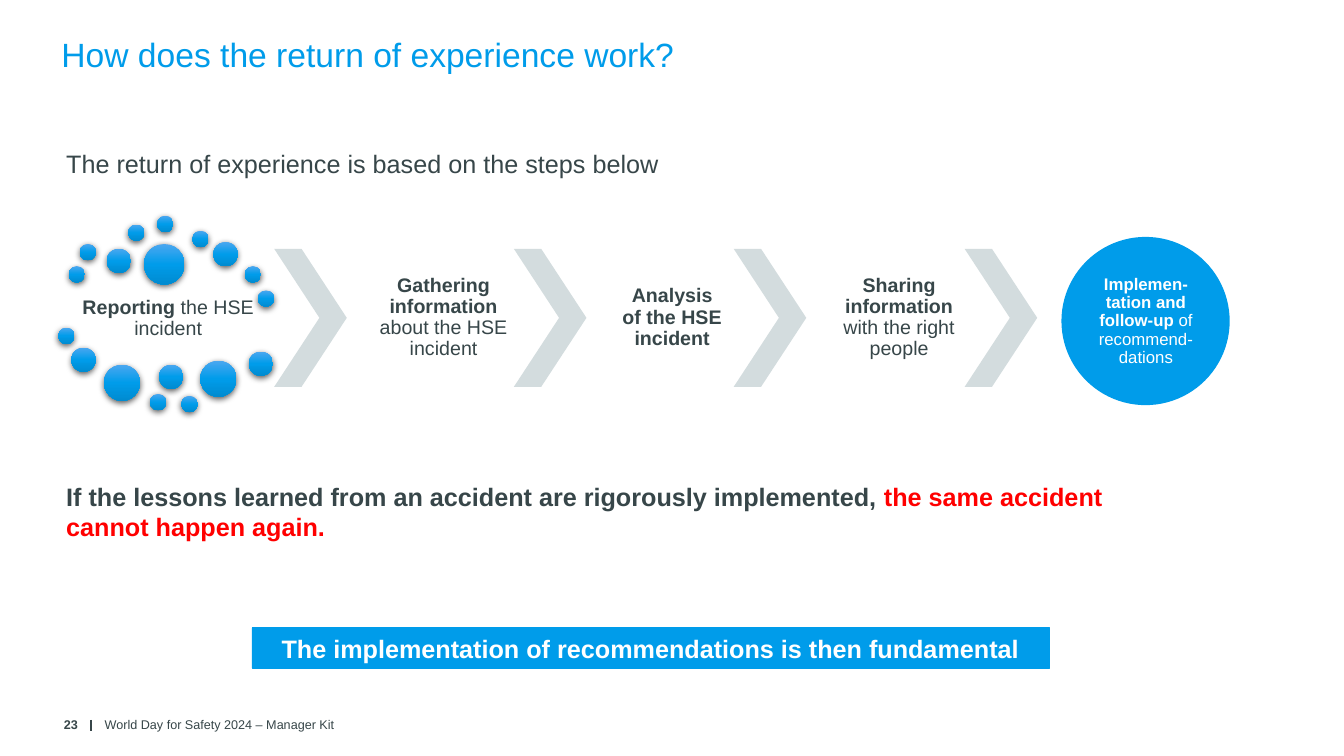
from pptx import Presentation, oxml
from pptx import util as u
from pptx.dml.color import RGBColor
from pptx.enum import shapes, text
from pptx.oxml import ns

COLORS = {
    "blue": "009CEA", "light_blue": "4BA7F0", "dark_blue": "008BD0",
    "slate": "374649", "grey": "D3DCDE", "red": "FF0000",
    "white": "FFFFFF", "black": "000000",
}
DOTS = {
    0.41: [(1.73, 6.71), (2.01, 6.15), (3.23, 5.66), (3.96, 5.44), (4.85, 5.82),
           (6.17, 6.71), (6.5, 7.32), (1.47, 8.26), (3.78, 9.93), (4.57, 9.98)],
    0.61: [(2.69, 6.27), (5.38, 6.1), (1.8, 8.76), (4.01, 9.19), (6.27, 8.86)],
    0.91: [(2.62, 9.19), (5.05, 9.09)],
    1.02: [(3.63, 6.15)],
}
CHEVRON_LEFTS = [6.91, 12.95, 18.49, 24.31]
STEP_TOP, STEP_HEIGHT = 6.27, 3.48
STEPS = [
    (1.75, 7.21, 1.65, [[("Reporting ", True), ("the HSE incident", False)]]),
    (8.69, STEP_TOP, STEP_HEIGHT,
     [[("Gathering information", True)], [("about the HSE incident", False)]]),
    (14.45, STEP_TOP, STEP_HEIGHT,
     [[("Analysis", True)], [("of the HSE", True)], [("incident", True)]]),
    (20.17, STEP_TOP, STEP_HEIGHT,
     [[("Sharing", True)], [("information", True)],
      [("with the right", False)], [("people", False)]]),
]
CENTERED = {"alignment": text.PP_ALIGN.CENTER, "line_spacing": 0.9}
MIDDLE = {"vertical_anchor": text.MSO_ANCHOR.MIDDLE}


def rgb(name):
    return RGBColor.from_string(COLORS[name])


def apply(target, values):
    for name, value in values.items():
        setattr(target, name, value)


def margins(size):
    sides = ("left", "top", "right", "bottom")
    return {f"margin_{side}": u.Cm(size) for side in sides}


def write(tf, paragraphs, size, color="slate", para=None, frame=None):
    apply(tf, {"word_wrap": True, **(frame or {})})
    for i, runs in enumerate(paragraphs):
        p = tf.add_paragraph() if i else tf.paragraphs[0]
        apply(p, para or {})
        for words, bold, *run_color in runs:
            r = p.add_run()
            r.text = words
            apply(r.font, {"name": "Arial", "size": u.Pt(size), "bold": bold})
            r.font.color.rgb = rgb(run_color[0] if run_color else color)


def add_text(s, box, paragraphs, size, **style):
    tb = s.shapes.add_textbox(*map(u.Cm, box))
    write(tb.text_frame, paragraphs, size, **style)


def add_shape(s, kind, box, color):
    sp = s.shapes.add_shape(kind, *map(u.Cm, box))
    sp.shadow.inherit = False
    sp.fill.solid()
    sp.fill.fore_color.rgb = rgb(color)
    sp.line.fill.background()
    return sp


def add_dot(s, left, top, size):
    sp = add_shape(s, shapes.MSO_SHAPE.OVAL, (left, top, size, size), "blue")
    stops = "".join(
        f'<a:gs pos="{pos}"><a:srgbClr val="{COLORS[name]}"/></a:gs>'
        for pos, name in ((0, "light_blue"), (50000, "blue"), (100000, "dark_blue")))
    gradient = oxml.parse_xml(
        f'<a:gradFill {ns.nsdecls("a")}><a:gsLst>{stops}</a:gsLst>'
        '<a:lin ang="5400000" scaled="0"/></a:gradFill>')
    shadow = oxml.parse_xml(
        f'<a:outerShdw {ns.nsdecls("a")} blurRad="57150" dist="19050" dir="5400000"'
        f' algn="ctr" rotWithShape="0"><a:srgbClr val="{COLORS["black"]}">'
        '<a:alpha val="63000"/></a:srgbClr></a:outerShdw>')
    props = sp._element.spPr
    props.replace(props.find(ns.qn("a:solidFill")), gradient)
    props.find(ns.qn("a:effectLst")).append(shadow)


def add_chevron(s, left):
    sp = add_shape(s, shapes.MSO_SHAPE.CHEVRON, (left, STEP_TOP, 1.83, STEP_HEIGHT), "grey")
    sp.adjustments[0] = 0.623


def add_rule(s, x, top, bottom):
    line = s.shapes.add_connector(
        shapes.MSO_CONNECTOR.STRAIGHT, u.Cm(x), u.Cm(top), u.Cm(x), u.Cm(bottom))
    line.line.color.rgb = rgb("slate")
    line.line.width = u.Pt(1)
    line._element.spPr.append(oxml.parse_xml(f'<a:effectLst {ns.nsdecls("a")}/>'))


def add_banner(s, words):
    sp = add_shape(s, shapes.MSO_SHAPE.RECTANGLE, (6.35, 15.82, 20.09, 1.02), "blue")
    sp.line.color.rgb = rgb("blue")
    sp.line.width = u.Pt(0.5)
    write(sp.text_frame, [[(words, True)]], 18, color="white",
          para={"alignment": text.PP_ALIGN.CENTER}, frame=MIDDLE)


def add_footer(s):
    add_rule(s, 2.29, 18.14, 18.42)
    add_text(s, (2.39, 17.91, 10.01, 0.71),
             [[("World Day for Safety 2024 – Manager Kit", False)]], 9, frame=MIDDLE)
    add_text(s, (0.61, 17.91, 1.6, 0.71), [[("23", True)]], 9,
             para={"alignment": text.PP_ALIGN.RIGHT}, frame=MIDDLE)


def add_process(s):
    for left, top, height, paragraphs in STEPS:
        add_text(s, (left, top, 4.98, height), paragraphs, 14,
                 para=CENTERED, frame={**MIDDLE, **margins(0.05)})
    for size, places in DOTS.items():
        for left, top in places:
            add_dot(s, left, top, size)
    for left in CHEVRON_LEFTS:
        add_chevron(s, left)
    add_shape(s, shapes.MSO_SHAPE.OVAL, (26.75, 5.97, 4.24, 4.24), "blue")
    add_text(s, (27.38, 6.6, 3, 3),
             [[("Implemen-tation and follow-up ", True), ("of recommend-dations", False)]],
             12, color="white", para=CENTERED, frame={**MIDDLE, **margins(0)})


def main():
    prs = Presentation()
    prs.slide_width, prs.slide_height = u.Cm(33.87), u.Cm(19.05)
    s = prs.slides.add_slide(prs.slide_layouts[6])
    add_text(s, (1.3, 0.74, 26.92, 1.52),
             [[("How does the return of experience work?", False)]], 24, color="blue")
    add_text(s, (1.42, 3.61, 28.22, 1),
             [[("The return of experience is based on the steps below", False)]], 18)
    add_process(s)
    add_text(s, (1.42, 12.01, 28.22, 1.8),
             [[("If the lessons learned from an accident are rigorously implemented, ", True),
               ("the same accident cannot happen again.", True, "red")]], 18)
    add_banner(s, "The implementation of recommendations is then fundamental")
    add_footer(s)
    prs.save("out.pptx")


if __name__ == "__main__":
    main()
